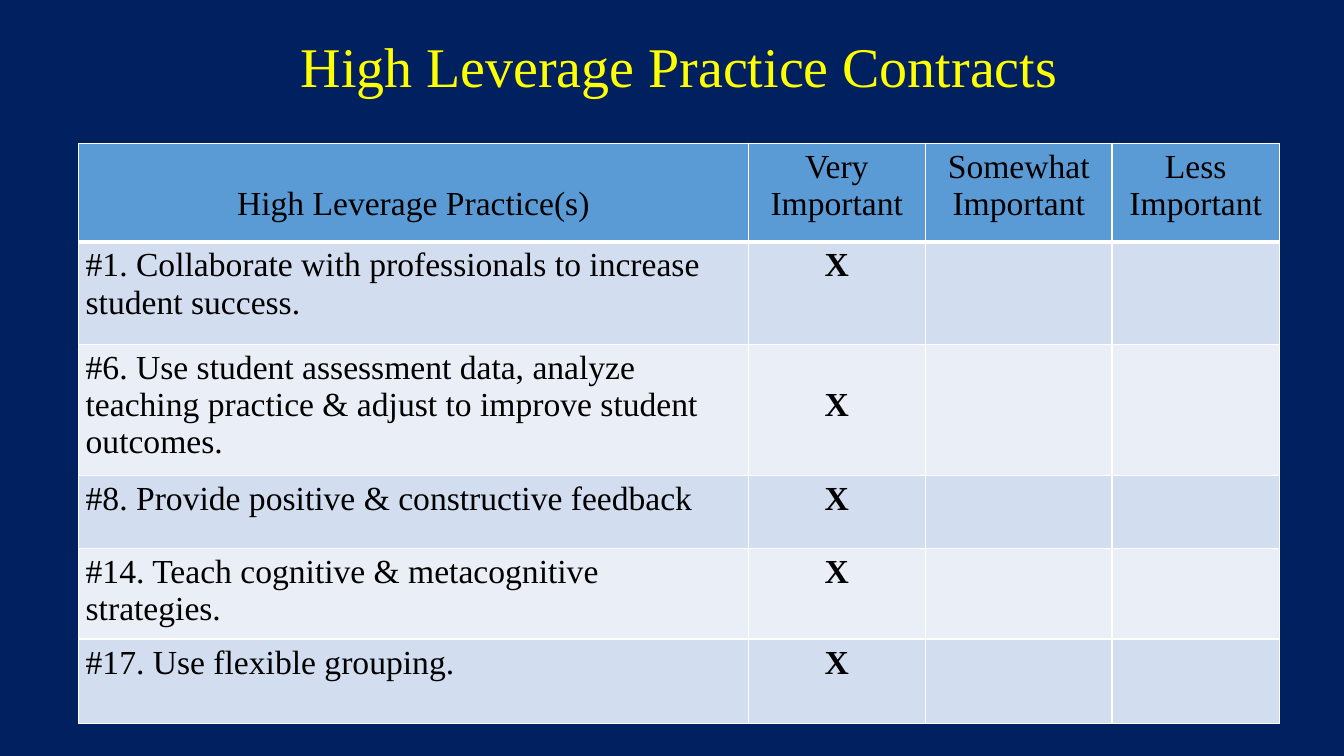
import dataclasses

import lxml.etree
import pptx
import pptx.dml.color
import pptx.enum.text
import pptx.oxml.ns
import pptx.util

Inches = pptx.util.Inches
Align = pptx.enum.text.PP_ALIGN


@dataclasses.dataclass(frozen=True)
class Theme:
    font: str = "Times New Roman"
    background: str = "002060"
    title: str = "FFFF00"
    text: str = "000000"
    border: str = "FFFFFF"
    header: str = "5B9BD5"
    bands: tuple = ("D2DEEF", "EAEFF7")
    title_size: int = 40
    table_size: int = 24


def color(value):
    return pptx.dml.color.RGBColor.from_string(value)


def write(frame, text, *, font, size, fill, bold=False, align=Align.LEFT, spacing=None):
    para = frame.paragraphs[0]
    para.alignment = align
    if spacing:
        para.line_spacing = spacing
    span = para.add_run()
    span.text = text
    span.font.name = font
    span.font.size = pptx.util.Pt(size)
    span.font.bold = bold
    span.font.color.rgb = color(fill)


class Page:
    def __init__(self, deck, theme):
        self.theme = theme
        self.slide = deck.slides.add_slide(deck.slide_layouts[6])
        background = self.slide.background.fill
        background.solid()
        background.fore_color.rgb = color(theme.background)

    def title(self, text, left, top, width, height):
        box = self.slide.shapes.add_textbox(Inches(left), Inches(top), Inches(width), Inches(height))
        frame = box.text_frame
        frame.word_wrap = True
        frame.vertical_anchor = pptx.enum.text.MSO_ANCHOR.MIDDLE
        write(frame, text, font=self.theme.font, size=self.theme.title_size,
              fill=self.theme.title, align=Align.CENTER, spacing=0.9)

    def table(self, rows, left, top, widths, heights, lowered):
        """Cells listed in lowered start one text line further down."""
        table = self.slide.shapes.add_table(
            len(heights), len(widths), Inches(left), Inches(top),
            Inches(sum(widths)), Inches(sum(heights))).table
        for column, width in zip(table.columns, widths):
            column.width = Inches(width)
        for row, height in zip(table.rows, heights):
            row.height = Inches(height)
        for r, texts in enumerate(rows):
            for c, text in enumerate(texts):
                self.cell(table.cell(r, c), text, r, c, (r, c) in lowered)

    def cell(self, cell, text, row, column, lowered):
        theme = self.theme
        is_header = row == 0
        self.borders(cell, bottom=3 if is_header else 1)
        cell.fill.solid()
        cell.fill.fore_color.rgb = color(theme.header if is_header else theme.bands[(row - 1) % 2])
        cell.margin_left = cell.margin_right = Inches(0.07)
        cell.margin_top = Inches(0.42 if lowered else 0.05)
        cell.margin_bottom = Inches(0.05)
        if text:
            write(cell.text_frame, text, font=theme.font, size=theme.table_size, fill=theme.text,
                  bold=not is_header and column > 0,
                  align=Align.CENTER if is_header or column > 0 else Align.LEFT)

    def borders(self, cell, bottom):
        properties = cell._tc.get_or_add_tcPr()
        name = pptx.oxml.ns.qn
        for side, width in (("L", 1), ("R", 1), ("T", 1), ("B", bottom)):
            line = lxml.etree.SubElement(properties, name("a:ln" + side), w=str(pptx.util.Pt(width)))
            fill = lxml.etree.SubElement(line, name("a:solidFill"))
            lxml.etree.SubElement(fill, name("a:srgbClr"), val=self.theme.border)


def main():
    deck = pptx.Presentation()
    deck.slide_width, deck.slide_height = Inches(13.33), Inches(7.5)
    page = Page(deck, Theme())

    # Title
    page.title("High Leverage Practice Contracts", 0.78, 0.26, 11.91, 0.85)

    # Table of practices, each marked as very important
    practices = [
        "#1. Collaborate with professionals to increase student success.",
        "#6. Use student assessment data, analyze teaching practice & adjust to improve student outcomes.",
        "#8. Provide positive & constructive feedback",
        "#14. Teach cognitive & metacognitive strategies.",
        "#17. Use flexible grouping.",
    ]
    header = ["High Leverage Practice(s)", "Very Important", "Somewhat Important", "Less Important"]
    rows = [header] + [[practice, "X", "", ""] for practice in practices]
    page.table(rows, 0.78, 1.42, widths=[6.64, 1.76, 1.85, 1.66],
               heights=[0.98, 1.02, 1.25, 0.72, 0.83, 0.84], lowered={(0, 0), (2, 1)})

    deck.save("out.pptx")


if __name__ == "__main__":
    main()
